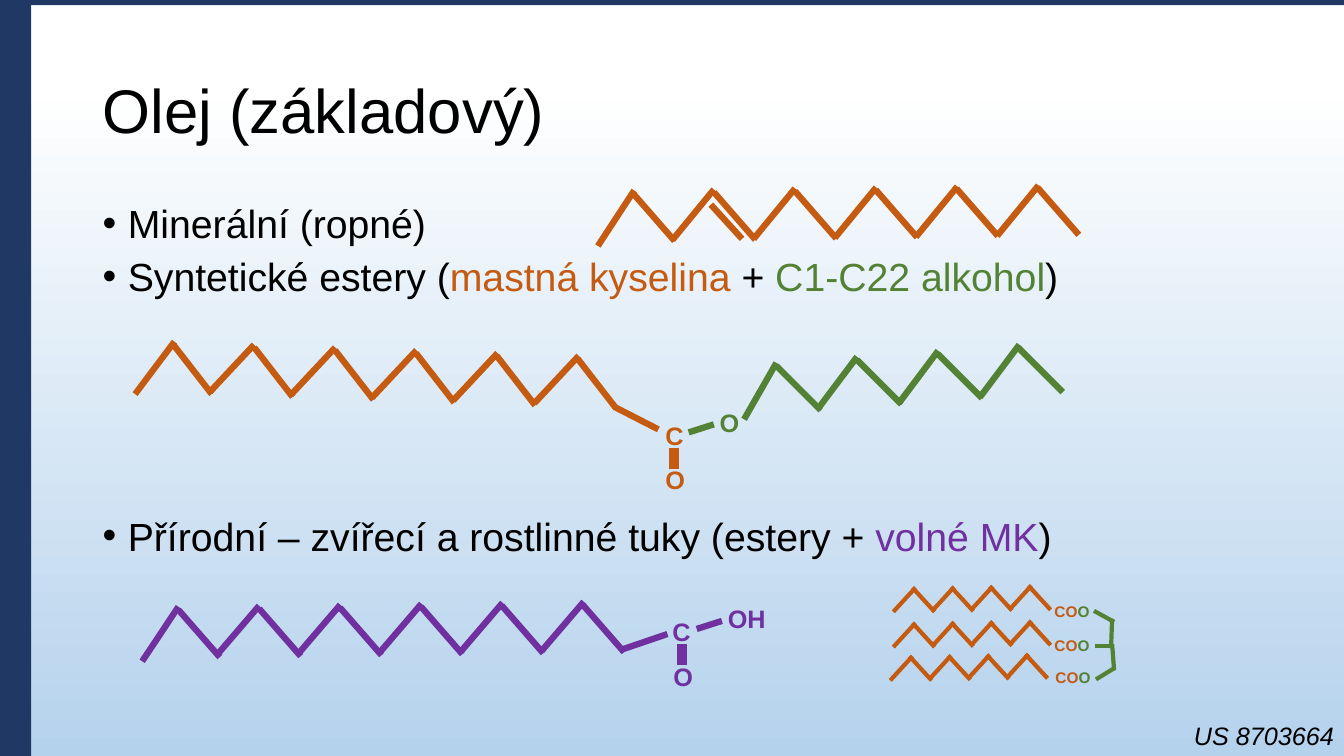
from dataclasses import dataclass

from lxml.etree import SubElement
from pptx import Presentation
from pptx.dml.color import RGBColor
from pptx.enum.shapes import MSO_CONNECTOR as Connector, MSO_SHAPE as Shape
from pptx.enum.text import MSO_ANCHOR as Anchor, PP_ALIGN as Align
from pptx.oxml.ns import qn
from pptx.util import Emu, Pt

EMU_PER_PX = 9144
FONT = "Arial"
BLACK, NAVY = "000000", "203864"
ORANGE, GREEN, PURPLE = "C55A11", "548235", "7030A0"
Run = tuple[str, str]


@dataclass(frozen=True)
class Bonds:
    """Parallel bonds; drift leads from the first one to the last."""
    start: tuple[int, int]
    end: tuple[int, int]
    count: int = 1
    drift: tuple[int, int] = (0, 0)


@dataclass(frozen=True)
class Chain:
    color: str
    bonds: tuple[Bonds, ...]
    weight: float = 4.5
    shift: tuple[int, int] = (0, 0)


@dataclass(frozen=True)
class Label:
    runs: tuple[Run, ...]
    box: tuple[int, int, int, int]
    size: int = 18


def carboxyl(color: str, x: int, y: int) -> tuple[Chain, Chain]:
    """Bonds around a carbon: two to the oxygen below, one to the right."""
    return (Chain(color, (Bonds((x, y), (x, y + 21), 2, (5, 0)),), 3),
            Chain(GREEN if color == ORANGE else color,
                  (Bonds((x + 17, y - 15), (x + 42, y - 23)),)))


TRIGLYCERIDE_TAILS = [
    Chain(ORANGE, (Bonds((886, 607), (908, 583), 4, (115, -2)),
                   Bonds((905, 583), (927, 607), 4, (115, -2))), 3, shift)
    for shift in ((0, 0), (0, 35), (-3, 68))
]
CHAINS = [
    # Mineral oil with its double bond
    Chain(ORANGE, (Bonds((593, 244), (629, 189)),
                   Bonds((667, 238), (708, 188), 5, (322, -4)),
                   Bonds((628, 192), (669, 239), 6, (401, -6)),
                   Bonds((705, 203), (736, 237)))),
    # Ester: fatty acid, then alcohol
    Chain(ORANGE, (Bonds((134, 391), (173, 339)),
                   Bonds((208, 389), (252, 342), 5, (322, 11)),
                   Bonds((172, 342), (210, 391), 6, (401, 14)),
                   Bonds((610, 404), (653, 426)))),
    *carboxyl(ORANGE, 666, 444),
    Chain(GREEN, (Bonds((738, 416), (770, 360)),
                  Bonds((811, 406), (850, 354), 3, (161, -12)),
                  Bonds((770, 363), (814, 407), 4, (240, -18)))),
    # Free fatty acid
    Chain(PURPLE, (Bonds((141, 656), (177, 602)),
                   Bonds((215, 650), (257, 601), 5, (322, -4)),
                   Bonds((177, 605), (218, 652), 6, (401, -5)),
                   Bonds((615, 645), (662, 629)))),
    *carboxyl(PURPLE, 674, 639),
    *TRIGLYCERIDE_TAILS,
    # Glycerol
    Chain(GREEN, (Bonds((1105, 617), (1085, 606)),
                  Bonds((1102, 641), (1086, 641)),
                  Bonds((1105, 663), (1087, 674)),
                  Bonds((1103, 614), (1102, 643)),
                  Bonds((1103, 639), (1105, 665))), 3),
]
COO = (("CO", ORANGE), ("O", GREEN))
LABELS = [
    Label((("C", ORANGE),), (650, 412, 43, 40)),
    Label((("O", ORANGE),), (650, 456, 43, 40)),
    Label((("O", GREEN),), (704, 399, 43, 40)),
    Label((("C", PURPLE),), (657, 607, 43, 40)),
    Label((("O", PURPLE),), (658, 651, 43, 40)),
    Label((("OH", PURPLE),), (712, 594, 73, 40)),
    *(Label(COO, (x, y, 58, 29), 11)
      for x, y in ((1036, 592), (1036, 626), (1037, 658))),
]
OIL_TYPES: list[tuple[int, tuple[Run, ...]]] = [
    (0, (("Minerální (ropné)", BLACK),)),
    (10, (("Syntetické estery (", BLACK), ("mastná kyselina ", ORANGE),
          ("+ ", BLACK), ("C1-C22 alkohol", GREEN), (")", BLACK))),
    (157, (("Přírodní – zvířecí a rostlinné tuky (estery + ", BLACK),
           ("volné MK", PURPLE), (")", BLACK))),
]


def px(value: float) -> Emu:
    return Emu(round(value * EMU_PER_PX))


def rgb(color: str) -> RGBColor:
    return RGBColor.from_string(color)


def write(paragraph, runs: tuple[Run, ...], size: int) -> None:
    paragraph.font.name = FONT
    paragraph.font.size = Pt(size)
    for text, color in runs:
        run = paragraph.add_run()
        run.text = text
        run.font.color.rgb = rgb(color)


def add_text_frame(slide, box: tuple[int, int, int, int]):
    frame = slide.shapes.add_textbox(*map(px, box)).text_frame
    frame.word_wrap = True
    return frame


def set_background(slide) -> None:
    fill = slide.background.fill
    fill.gradient()
    fill.gradient_angle = 270
    for stop, position, color in zip(fill.gradient_stops, (0.11, 1), ("FFFFFF", "B5D2EC")):
        stop.position = position
        stop.color.rgb = rgb(color)


def add_title(slide) -> None:
    title = slide.shapes.title
    title.left, title.top, title.width, title.height = map(px, (92, 40, 1150, 145))
    title.text_frame.vertical_anchor = Anchor.MIDDLE
    paragraph = title.text_frame.paragraphs[0]
    paragraph.alignment = Align.LEFT
    paragraph.line_spacing = 0.9
    write(paragraph, (("Olej (základový)", BLACK),), 44)


def add_oil_types(slide) -> None:
    frame = add_text_frame(slide, (92, 200, 1150, 364))
    for index, (space, runs) in enumerate(OIL_TYPES):
        paragraph = frame.add_paragraph() if index else frame.paragraphs[0]
        paragraph.line_spacing = 0.84
        paragraph.space_before = Pt(space)
        properties = paragraph._p.get_or_add_pPr()
        properties.set("marL", str(px(25)))
        properties.set("indent", str(px(-25)))
        SubElement(properties, qn("a:buFont")).set("typeface", FONT)
        SubElement(properties, qn("a:buChar")).set("char", "•")
        write(paragraph, runs, 28)


def add_chain(slide, chain: Chain) -> None:
    group = slide.shapes.add_group_shape()
    for bonds in chain.bonds:
        for index in range(bonds.count):
            part = index / max(bonds.count - 1, 1)
            dx, dy = (s + d * part for s, d in zip(chain.shift, bonds.drift))
            (x1, y1), (x2, y2) = bonds.start, bonds.end
            bond = group.shapes.add_connector(
                Connector.STRAIGHT, px(x1 + dx), px(y1 + dy), px(x2 + dx), px(y2 + dy))
            bond.line.color.rgb = rgb(chain.color)
            bond.line.width = Pt(chain.weight)
            SubElement(bond._element.spPr, qn("a:effectLst"))


def add_label(slide, label: Label) -> None:
    paragraph = add_text_frame(slide, label.box).paragraphs[0]
    paragraph.font.bold = True
    write(paragraph, label.runs, label.size)


def add_frame_bar(slide, box: tuple[int, int, int, int]) -> None:
    bar = slide.shapes.add_shape(Shape.RECTANGLE, *map(px, box))
    bar.shadow.inherit = False
    bar.fill.solid()
    bar.fill.fore_color.rgb = rgb(NAVY)
    bar.line.fill.background()


def add_patent(slide) -> None:
    paragraph = add_text_frame(slide, (1160, 710, 173, 40)).paragraphs[0]
    paragraph.alignment = Align.RIGHT
    paragraph.font.italic = True
    write(paragraph, (("US 8703664", BLACK),), 18)


def main() -> None:
    deck = Presentation()
    deck.slide_width, deck.slide_height = px(1333), px(750)
    slide = deck.slides.add_slide(deck.slide_layouts[5])
    set_background(slide)
    add_title(slide)
    add_oil_types(slide)
    for chain in CHAINS:
        add_chain(slide, chain)
    for label in LABELS:
        add_label(slide, label)
    for bar in ((0, 4, 31, 746), (0, 0, 1333, 5)):
        add_frame_bar(slide, bar)
    add_patent(slide)
    deck.save("out.pptx")


if __name__ == "__main__":
    main()
